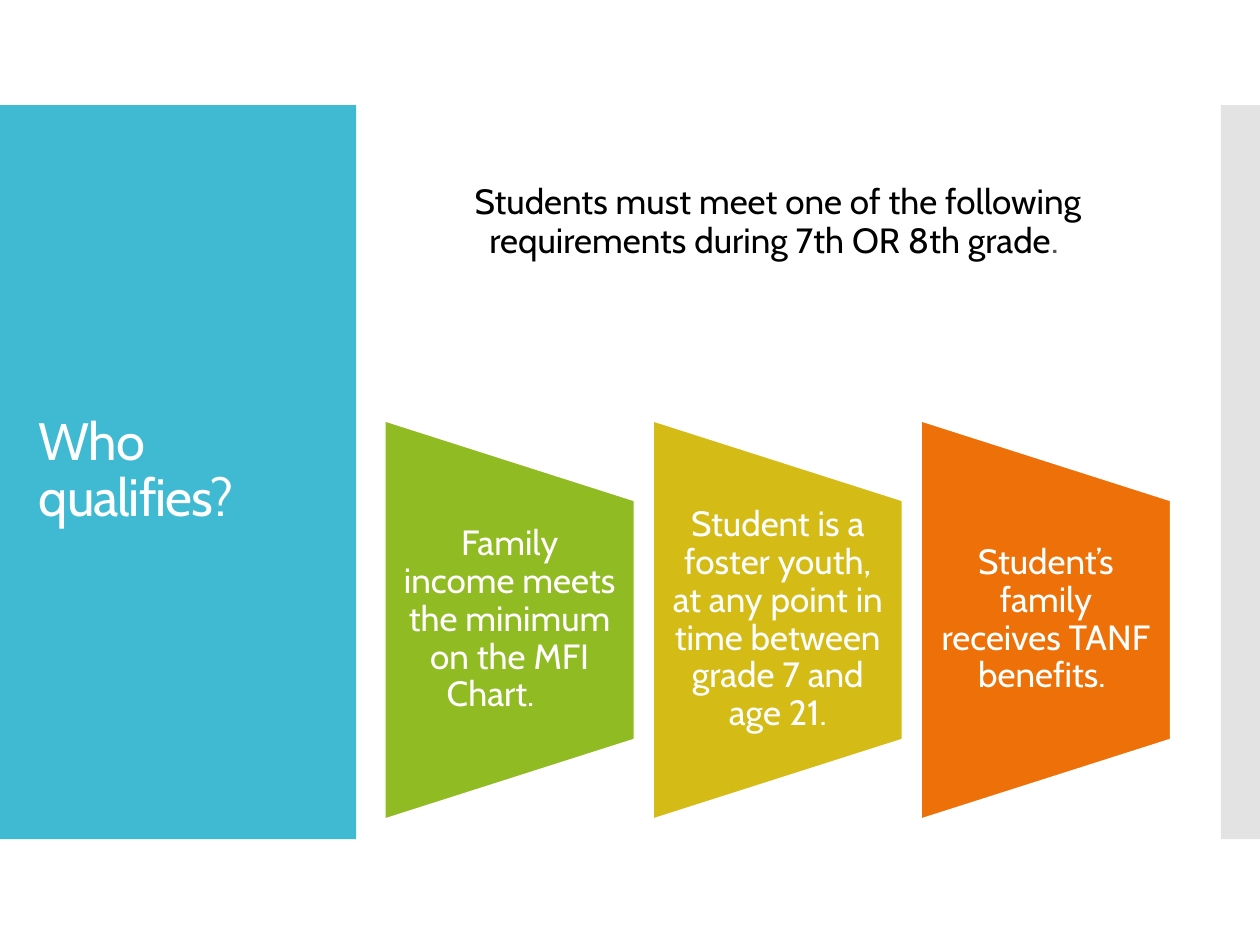
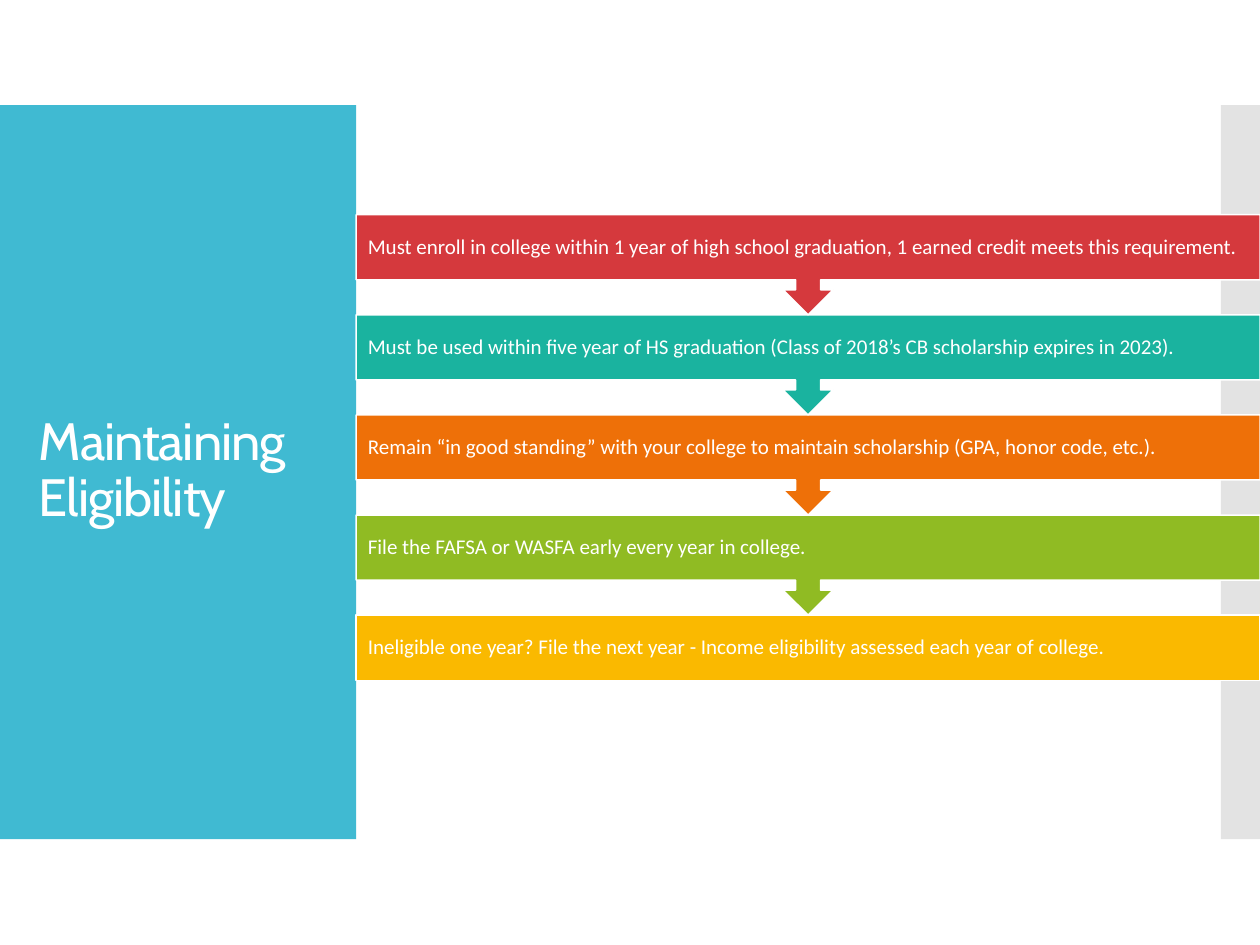
"""Build the two scholarship slides: who qualifies, and maintaining eligibility."""
from lxml import etree
from pptx import Presentation
from pptx import util as u
from pptx.dml import color as dml
from pptx.enum import shapes, text
from pptx.oxml import ns

COLOURS = {
    "white": "FFFFFF", "black": "000000", "grey": "545454", "edge": "C8C8C8",
    "blue": "40BAD2", "green": "90BB23", "olive": "D4BB16", "orange": "EE7008",
    "red": "D5393D", "teal": "1AB39F", "yellow": "FAB900",
}
HEADING_FONT, STEP_FONT = "Cabin", "Calibri"
PRESET = shapes.MSO_SHAPE
ALIGN = text.PP_ALIGN
ANCHOR = text.MSO_ANCHOR


class Deck:
    def __init__(self):
        self.prs = Presentation()
        self.prs.slide_width, self.prs.slide_height = u.Pt(720), u.Pt(540)
        self.slide = None

    def rgb(self, name):
        return dml.RGBColor.from_string(COLOURS[name])

    def start(self, heading):
        self.slide = self.prs.slides.add_slide(self.prs.slide_layouts[5])
        self.panel(PRESET.RECTANGLE, (0, 60, 203.5, 419.5), "blue")
        edge = self.panel(PRESET.RECTANGLE, (697.6, 60, 22.4, 419.5), "edge")
        tint = edge.element.find(".//" + ns.qn("a:srgbClr"))
        etree.SubElement(tint, ns.qn("a:alpha"), val="50000")
        title = self.slide.shapes.title
        title.element.getparent().append(title.element)
        title.left, title.top = u.Pt(15), u.Pt(88.5)
        title.width, title.height = u.Pt(174), u.Pt(362)
        self.fill_text(title.text_frame, [(heading, 30, "white")], HEADING_FONT,
                       ALIGN.LEFT, ANCHOR.MIDDLE, spacing=-0.6)

    def panel(self, preset, box, fill, rotation=0, outline=None):
        panel = self.slide.shapes.add_shape(preset, *map(u.Pt, box))
        panel.rotation = rotation
        panel.shadow.inherit = False
        panel.fill.solid()
        panel.fill.fore_color.rgb = self.rgb(fill)
        if outline:
            panel.line.color.rgb = self.rgb(outline)
            panel.line.width = u.Pt(0.85)
        else:
            panel.line.fill.background()
        return panel

    def label(self, box, runs, font, align, anchor=ANCHOR.MIDDLE,
              insets=(7.2, 3.6), before=0):
        frame = self.slide.shapes.add_textbox(*map(u.Pt, box)).text_frame
        frame.margin_left = frame.margin_right = u.Pt(insets[0])
        frame.margin_top = frame.margin_bottom = u.Pt(insets[1])
        self.fill_text(frame, runs, font, align, anchor, before)

    def fill_text(self, frame, runs, font, align, anchor, before=0, spacing=0):
        frame.word_wrap = True
        frame.auto_size = text.MSO_AUTO_SIZE.NONE
        frame.vertical_anchor = anchor
        paragraph = frame.paragraphs[0]
        paragraph.alignment = align
        paragraph.line_spacing = 0.9
        paragraph.space_before = u.Pt(before)
        for words, size, colour in runs:
            run = paragraph.add_run()
            run.text = words
            run.font.name, run.font.size = font, u.Pt(size)
            run.font.color.rgb = self.rgb(colour)
            if spacing:
                run._r.get_or_add_rPr().set("spc", str(round(spacing * 100)))


def qualifying(deck):
    deck.start("Who qualifies?")
    intro = ("Students must meet one of the following requirements "
             "during 7th OR 8th grade")
    deck.label((208.8, 101.5, 471.6, 34), [(intro, 20, "black"), (". ", 21, "grey")],
               HEADING_FONT, ALIGN.CENTER, ANCHOR.TOP, before=18)
    requirements = [
        ("Family income meets the minimum on the MFI Chart.\t", "green"),
        ("Student is a foster youth, at any point in time between grade 7 and age 21.",
         "olive"),
        ("Student’s family receives TANF benefits. ", "orange"),
    ]
    length, breadth, pitch = 227.5, 142.5, 153.2
    for i, (requirement, colour) in enumerate(requirements):
        left = 220 + i * pitch
        deck.panel(PRESET.FLOWCHART_MANUAL_OPERATION,
                   (left - (length - breadth) / 2, 283, length, breadth),
                   colour, rotation=270, outline="white")
        deck.label((left, 286, breadth, 136.5), [(requirement, 20, "white")],
                   HEADING_FONT, ALIGN.CENTER, insets=(10, 0))


def maintaining(deck):
    deck.start("Maintaining Eligibility")
    steps = [
        ("Must enroll in college within 1 year of high school graduation, "
         "1 earned credit meets this requirement.", "red"),
        ("Must be used within five year of HS graduation "
         "(Class of 2018’s CB scholarship expires in 2023).", "teal"),
        ("Remain “in good standing” with your college to maintain scholarship "
         "(GPA, honor code, etc.).", "orange"),
        ("File the FAFSA or WASFA early every year in college.", "green"),
        ("Ineligible one year? File the next year - "
         "Income eligibility assessed each year of college.", "yellow"),
    ]
    left, width, bar, pitch = 203.5, 516.5, 37.3, 57.2
    last = len(steps) - 1
    for i, (step, colour) in reversed(list(enumerate(steps))):
        top = 122.7 + i * pitch
        if i == last:
            deck.panel(PRESET.RECTANGLE, (left, top, width, bar), colour,
                       outline="white")
        else:
            deck.panel(PRESET.UP_ARROW_CALLOUT, (left, top, width, pitch), colour,
                       rotation=180, outline="white")
        deck.label((left, top, width, bar), [(step, 12, "white")],
                   STEP_FONT, ALIGN.LEFT, insets=(6.7, 6.7))


def main():
    deck = Deck()
    qualifying(deck)
    maintaining(deck)
    deck.prs.save("out.pptx")


if __name__ == "__main__":
    main()
